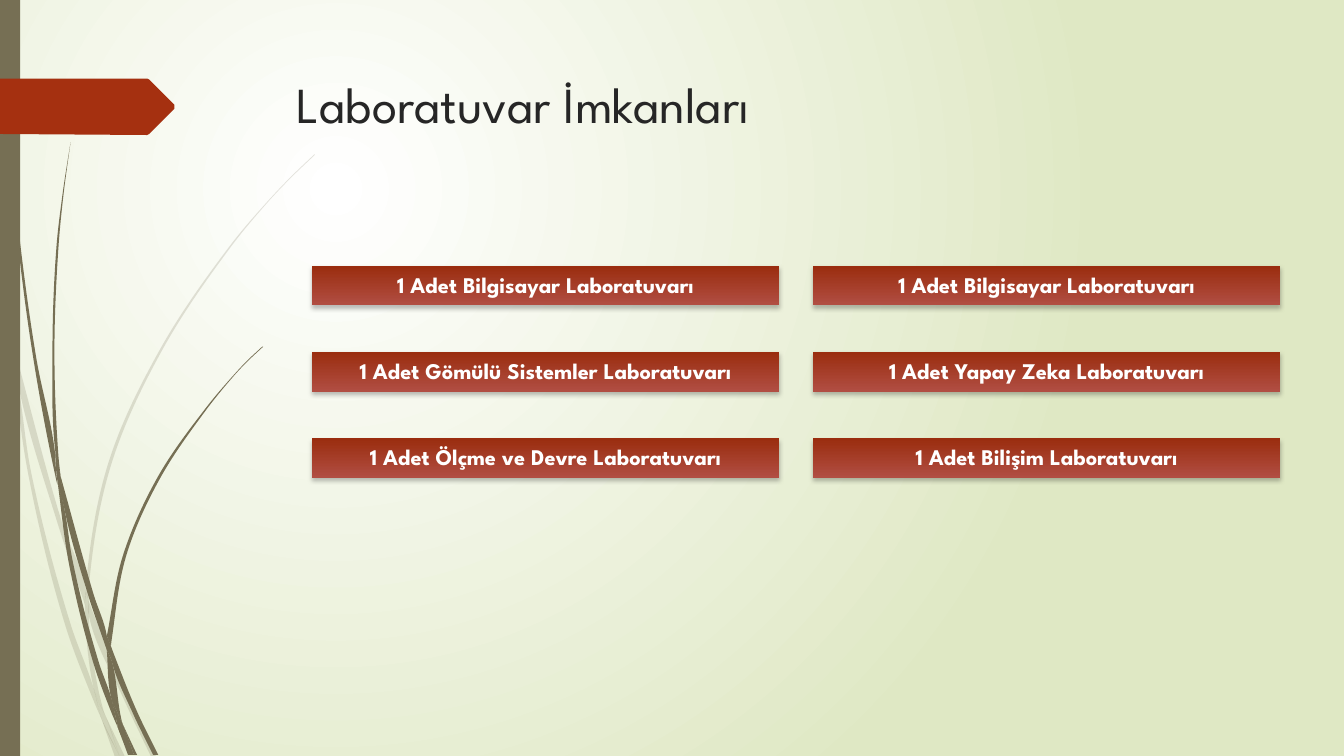
from math import hypot

from lxml.etree import SubElement
from pptx import Presentation
from pptx.dml.color import RGBColor
from pptx.enum.shapes import MSO_SHAPE as SHAPE
from pptx.enum.text import MSO_ANCHOR as ANCHOR, PP_ALIGN as ALIGN
from pptx.oxml.ns import qn
from pptx.util import Inches, Pt

# Content
TITLE = "Laboratuvar İmkanları"
LABS = [
    ("1 Adet Bilgisayar Laboratuvarı", "1 Adet Bilgisayar Laboratuvarı"),
    ("1 Adet Gömülü Sistemler Laboratuvarı", "1 Adet Yapay Zeka Laboratuvarı"),
    ("1 Adet Ölçme ve Devre Laboratuvarı", "1 Adet Bilişim Laboratuvarı"),
]

# Outlines of the grass pieces and of the tab, in inches
PALE_GRASS = [
    [(.11, 3.5), (.09, 3.22), (0, 2.82), (0, 2.99), (.1, 3.44)],
    [(.58, 5.22), (.84, 5.99), (.85, 5.86), (.62, 5.2), (.14, 3.45),
     (.17, 3.76)],
    [(.92, 6.07), (.88, 5.96), (.88, 6.1), (1.23, 6.94), (1.5, 7.51),
     (1.55, 7.51), (1.27, 6.92)],
    [(1.19, 7.51), (1.24, 7.51), (1.05, 7.11)],
    [(.93, 6.83), (.7, 6.19), (.31, 4.69), (.17, 3.76), (.11, 3.5), (.28, 4.7),
     (.65, 6.21), (.92, 6.93), (1.01, 7.14), (.99, 7.07)],
    [(.84, 5.99), (.87, 6.46), (.93, 6.83), (.96, 6.92), (1.05, 7.11),
     (1.03, 7.06), (.91, 6.46), (.88, 6.1), (.88, 6.08)],
    [(.88, 5.84), (1.1, 4.62), (1.6, 3.49), (2.29, 2.45), (2.68, 1.98),
     (2.9, 1.75), (3.12, 1.54), (3.12, 1.53), (2.89, 1.75), (2.68, 1.97),
     (2.28, 2.44), (1.58, 3.48), (1.07, 4.61), (.85, 5.84), (.85, 5.86),
     (.88, 5.96)],
    [(1.01, 7.14), (1.14, 7.51), (1.19, 7.51)],
    [(.88, 6.08), (.88, 6.1), (.88, 5.96), (.85, 5.86), (.84, 5.99)],
    [(.96, 6.92), (.93, 6.83), (.99, 7.07), (1.01, 7.14), (1.19, 7.51),
     (1.05, 7.11)],
]
DARK_GRASS = [
    [(.07, 1.1), (.17, 2.33), (.33, 3.55), (.56, 4.77), (.57, 4.81),
     (.55, 4.57), (.55, 4.53), (.36, 3.55), (.19, 2.32), (.08, 1.09),
     (.05, .48), (.04, 0), (.03, 0), (.04, .48)],
    [(.88, 5.92), (1.06, 6.45), (1.06, 6.31), (.93, 5.9), (.6, 4.72),
     (.64, 5.05)],
    [(1.13, 6.49), (1.1, 6.41), (1.11, 6.56), (1.32, 7.08), (1.52, 7.49),
     (1.57, 7.49), (1.36, 7.06)],
    [(1.1, 6.91), (.98, 6.57), (.72, 5.56), (.64, 5.05), (.57, 4.77),
     (.68, 5.57), (.93, 6.59), (1.11, 7.08), (1.17, 7.22), (1.16, 7.17)],
    [(.6, 4.72), (.58, 4.53), (.54, 3.49), (.58, 2.45), (.63, 1.93),
     (.7, 1.41), (.62, 1.93), (.56, 2.45), (.52, 3.49), (.55, 4.49)],
    [(1.33, 7.49), (1.36, 7.49), (1.22, 7.19)],
    [(.57, 4.77), (.64, 5.05), (.6, 4.72), (.55, 4.49), (.55, 4.53)],
    [(1.11, 6.33), (1.25, 5.52), (1.58, 4.76), (2.05, 4.06), (2.31, 3.74),
     (2.45, 3.59), (2.61, 3.44), (2.6, 3.44), (2.45, 3.58), (2.31, 3.73),
     (2.04, 4.05), (1.56, 4.74), (1.22, 5.51), (1.06, 6.31), (1.1, 6.41)],
    [(1.17, 7.22), (1.27, 7.49), (1.31, 7.49)],
    [(1.06, 6.45), (1.1, 6.91), (1.16, 7.06), (1.22, 7.19), (1.21, 7.16),
     (1.11, 6.56), (1.09, 6.51)],
    [(1.06, 6.45), (1.09, 6.51), (1.11, 6.56), (1.1, 6.41), (1.06, 6.31)],
    [(1.16, 7.06), (1.1, 6.91), (1.16, 7.17), (1.17, 7.22), (1.3, 7.49),
     (1.33, 7.49), (1.22, 7.19)],
]
TAB = [(1.73, 1.08), (1.48, 1.33), (1.46, 1.34), (0, 1.33), (0, .78),
       (1.46, .78), (1.48, .79), (1.73, 1.04)]

FONT = "League Spartan"
WHITE = RGBColor(0xFF, 0xFF, 0xFF)
INK = RGBColor(0x26, 0x26, 0x26)
LIME = RGBColor(0xDF, 0xE8, 0xC4)
OLIVE = RGBColor(0x76, 0x6F, 0x54)
RUST = RGBColor(0xA5, 0x30, 0x10)
BAR_LIGHT = RGBColor(0xB1, 0x4E, 0x43)
BAR_DARK = RGBColor(0x9A, 0x2D, 0x0F)

BAR_LEFT, BAR_TOP, BAR_W, BAR_H = 3.09, 2.64, 4.64, 0.39
COL_STEP, ROW_STEP = 4.97, 1.71 / 2
UNITS = 1000  # freeform units per inch


def set_gradient(fill, colors):
    fill.gradient()
    for stop, color in zip(fill.gradient_stops, colors):
        stop.color.rgb = color


def set_solid(sp, color):
    sp.shadow.inherit = False
    sp.fill.solid()
    sp.fill.fore_color.rgb = color
    sp.line.fill.background()


def add_alpha(color_element, percent):
    SubElement(color_element, qn("a:alpha"), val=str(percent * 1000))


def add_outline(s, points, color):
    nodes = [(x * UNITS, y * UNITS) for x, y in points]
    builder = s.shapes.build_freeform(*nodes[0], scale=Inches(1) / UNITS)
    builder.add_line_segments(nodes[1:] + nodes[:1], close=True)
    sp = builder.convert_to_shape()
    set_solid(sp, color)
    return sp


def unit(a, b):
    size = hypot(b[0] - a[0], b[1] - a[1])
    return (b[0] - a[0]) / size, (b[1] - a[1]) / size


def bend(sp, points):
    """Turn the straight edges into curves, keeping sharp corners."""
    left, top = min(x for x, y in points), min(y for x, y in points)
    count = len(points)
    edges = [unit(points[i], points[(i + 1) % count]) for i in range(count)]

    def tangent(node, edge):
        (ax, ay), (bx, by) = edges[node - 1], edges[node]
        if ax * bx + ay * by < 0.9:
            return edges[edge]
        return unit((0, 0), (ax + bx, ay + by))

    for i, line in enumerate(sp.element.findall(".//" + qn("a:lnTo"))):
        j = (i + 1) % count
        a, b = points[i], points[j]
        third = hypot(b[0] - a[0], b[1] - a[1]) / 3
        (ux, uy), (vx, vy) = tangent(i, i), tangent(j, i)
        controls = [(a[0] + ux * third, a[1] + uy * third),
                    (b[0] - vx * third, b[1] - vy * third)]
        line.tag = qn("a:cubicBezTo")
        for k, (x, y) in enumerate(controls):
            pt = SubElement(line, qn("a:pt"), x=str(round((x - left) * UNITS)),
                            y=str(round((y - top) * UNITS)))
            line.insert(k, pt)


def add_bar(s, text, left, top):
    box = Inches(left), Inches(top), Inches(BAR_W), Inches(BAR_H)
    sp = s.shapes.add_shape(SHAPE.RECTANGLE, *box)
    set_gradient(sp.fill, (BAR_LIGHT, BAR_DARK))
    sp.fill.gradient_angle = 90
    sp.line.fill.background()
    sp.shadow.inherit = False
    effects = sp.element.spPr.find(qn("a:effectLst"))
    shadow = SubElement(effects, qn("a:outerShdw"), blurRad=str(Pt(3)),
                        dist=str(Pt(2)), dir="5400000", rotWithShape="0")
    add_alpha(SubElement(shadow, qn("a:srgbClr"), val="000000"), 25)

    tf = s.shapes.add_textbox(*box).text_frame
    tf.word_wrap = True
    tf.vertical_anchor = ANCHOR.MIDDLE
    tf.margin_left = tf.margin_right = Inches(0.07)
    tf.margin_top = tf.margin_bottom = Inches(0.07)
    p = tf.paragraphs[0]
    p.text = text
    p.alignment = ALIGN.CENTER
    p.line_spacing = 0.9
    p.font.name, p.font.size, p.font.bold = FONT, Pt(16), True
    p.font.color.rgb = WHITE


def main():
    prs = Presentation()
    prs.slide_width, prs.slide_height = Inches(13.33), Inches(7.5)
    s = prs.slides.add_slide(prs.slide_layouts[5])

    # Radial background centred in the upper left quarter
    set_gradient(s.background.fill, (WHITE, LIME))
    grad = s.element.find(".//" + qn("a:gradFill"))
    grad.remove(grad.find(qn("a:lin")))
    circle = SubElement(grad, qn("a:path"), path="circle")
    SubElement(circle, qn("a:fillToRect"),
               l="50000", t="50000", r="100000", b="100000")

    # Grass, side strip and arrow tab
    for pieces, opacity in ((PALE_GRASS, 20), (DARK_GRASS, 100)):
        for points in pieces:
            sp = add_outline(s, points, OLIVE)
            bend(sp, points)
            if opacity < 100:
                add_alpha(sp.element.spPr.find(".//" + qn("a:srgbClr")), opacity)
    strip = s.shapes.add_shape(SHAPE.RECTANGLE, 0, 0, Inches(0.2), Inches(7.5))
    set_solid(strip, OLIVE)
    add_outline(s, TAB, RUST)

    # Title
    title = s.shapes.title
    title.left, title.top = Inches(2.84), Inches(0.68)
    title.width, title.height = Inches(9.75), Inches(1.4)
    title.text_frame.vertical_anchor = ANCHOR.TOP
    p = title.text_frame.paragraphs[0]
    p.text = TITLE
    p.alignment = ALIGN.LEFT
    p.font.name, p.font.size = FONT, Pt(36)
    p.font.color.rgb = INK

    # Laboratory bars
    for row, labs in enumerate(LABS):
        for col, lab in enumerate(labs):
            add_bar(s, lab, BAR_LEFT + col * COL_STEP, BAR_TOP + row * ROW_STEP)

    prs.save("out.pptx")


if __name__ == "__main__":
    main()
